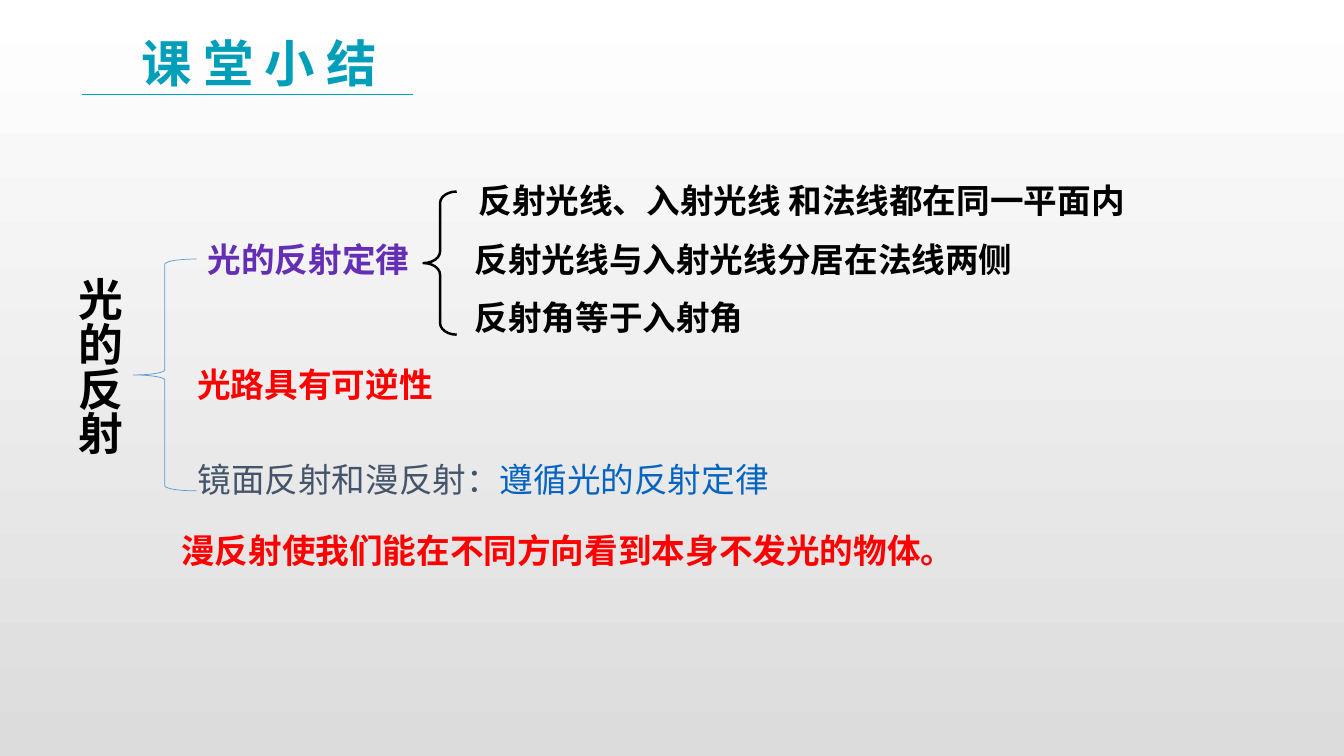
import pptx
import pptx.util
import pptx.dml.color
import pptx.enum.shapes
import pptx.enum.text
import pptx.oxml.ns
import lxml.etree

Inches = pptx.util.Inches
Align = pptx.enum.text.PP_ALIGN
EAST_ASIAN_FONT = "Noto Sans CJK SC"
BLACK, RED, TEAL = "000000", "FF0000", "009FB9"


def colour(hex_value):
    return pptx.dml.color.RGBColor.from_string(hex_value)


def apply(target, values):
    for name, value in values.items():
        setattr(target, name, value)


class SummarySlide:
    body_style = {"size": pptx.util.Pt(24), "name": "Karla", "bold": True}
    frame_style = {
        "word_wrap": True,
        "auto_size": pptx.enum.text.MSO_AUTO_SIZE.NONE,
        "vertical_anchor": pptx.enum.text.MSO_ANCHOR.TOP,
    }

    def __init__(self, presentation):
        self.slide = presentation.slides.add_slide(presentation.slide_layouts[5])

    def background(self, top, bottom):
        fill = self.slide.background.fill
        fill.gradient()
        fill.gradient_angle = 270
        for stop, position, shade in zip(fill.gradient_stops, (0, 1), (top, bottom)):
            stop.position = position
            stop.color.rgb = colour(shade)

    def fill_text(self, shape, runs, align=Align.LEFT, **changes):
        apply(shape.text_frame, self.frame_style)
        paragraph = shape.text_frame.paragraphs[0]
        paragraph.alignment = align
        for words, shade in runs:
            run = paragraph.add_run()
            run.text = words
            apply(run.font, {**self.body_style, **changes})
            run.font.color.rgb = colour(shade)
            latin = run.font._element.find(pptx.oxml.ns.qn("a:latin"))
            east_asian = lxml.etree.Element(pptx.oxml.ns.qn("a:ea"), typeface=EAST_ASIAN_FONT)
            latin.addnext(east_asian)

    def title(self, box, words, shade):
        heading = self.slide.shapes.title
        apply(heading, dict(zip(("left", "top", "width", "height"), map(Inches, box))))
        self.fill_text(heading, [(words, shade)], size=pptx.util.Pt(36), name=EAST_ASIAN_FONT)

    def text(self, box, runs, align=Align.LEFT, **changes):
        label = self.slide.shapes.add_textbox(*map(Inches, box))
        self.fill_text(label, runs, align, **changes)
        return label

    def vertical_text(self, box, words, shade):
        label = self.text(box, [(words, shade)], size=pptx.util.Pt(32), name="Arial")
        label.text_frame._txBody.bodyPr.set("vert", "eaVert")

    def brace(self, box, shade, weight, curve):
        brace = self.slide.shapes.add_shape(
            pptx.enum.shapes.MSO_SHAPE.LEFT_BRACE, *map(Inches, box))
        brace.adjustments[0] = curve
        brace.shadow.inherit = False
        brace.fill.background()
        brace.line.color.rgb = colour(shade)
        brace.line.width = pptx.util.Pt(weight)

    def rule(self, left, right, y, shade, weight):
        rule = self.slide.shapes.add_connector(
            pptx.enum.shapes.MSO_CONNECTOR.STRAIGHT,
            Inches(left), Inches(y), Inches(right), Inches(y))
        rule.line.color.rgb = colour(shade)
        rule.line.width = pptx.util.Pt(weight)
        lxml.etree.SubElement(rule._element.spPr, pptx.oxml.ns.qn("a:effectLst"))


def main():
    presentation = pptx.Presentation()
    apply(presentation, {"slide_width": Inches(13.33), "slide_height": Inches(7.5)})
    summary = SummarySlide(presentation)
    summary.background("FFFFFF", "DCDCDC")
    summary.title((1.3, 0.27, 2.96, 0.71), "课 堂 小 结", TEAL)
    summary.rule(0.81, 4.1, 0.94, TEAL, 0.5)

    summary.vertical_text((0.56, 2.65, 0.74, 2.3), "光的反射", BLACK)
    summary.brace((1.32, 2.57, 0.63, 2.3), "5B9BD5", 0.5, 0.08)

    summary.text((1.7, 2.32, 2.72, 0.5), [("光的反射定律", "652FB5")], Align.CENTER)
    summary.brace((4.2, 1.9, 0.33, 1.42), BLACK, 1.75, 0.35)
    laws = [
        (4.45, 7, "反射光线、入射光线 和法线都在同一平面内", Align.CENTER),
        (4.61, 6.75, "反射光线与入射光线分居在法线两侧", Align.LEFT),
        (4.61, 5.08, "反射角等于入射角", Align.LEFT),
    ]
    for row, (left, width, law, align) in enumerate(laws):
        summary.text((left, 1.74 + row * 0.58, width, 0.5), [(law, BLACK)], align)

    summary.text((1.86, 3.56, 2.67, 0.5), [("光路具有可逆性", RED)])
    summary.text((1.86, 4.5, 6.08, 0.5),
                 [("镜面反射和漫反射：", "44546A"), ("遵循光的反射定律", "0563C1")], bold=False)
    summary.text((1.7, 5.21, 8.5, 0.5),
                 [("漫反射使我们能在不同方向看到本身不发光的物体。", RED)])
    presentation.save("out.pptx")


if __name__ == "__main__":
    main()
